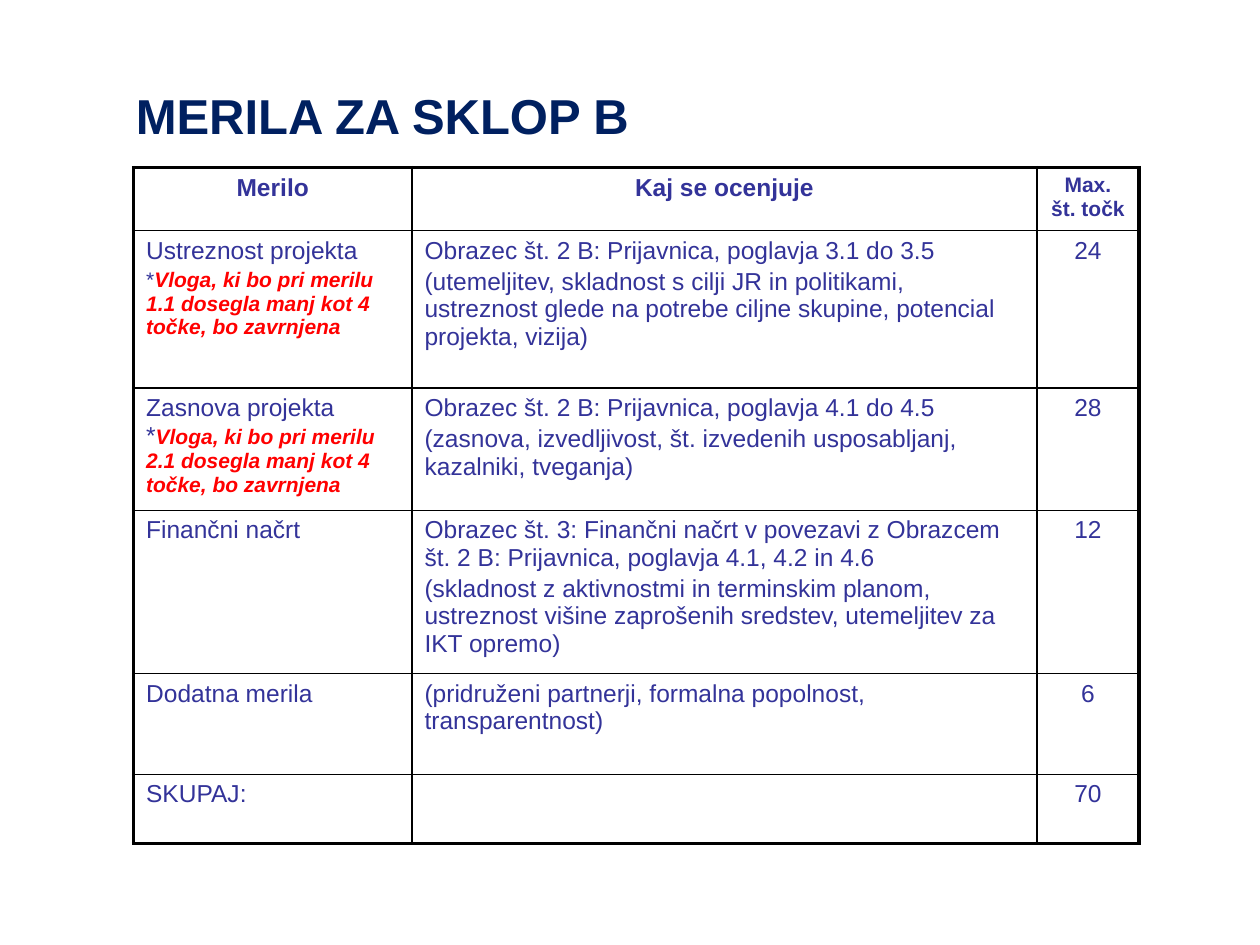
from lxml import etree
from pptx import Presentation
from pptx.dml.color import RGBColor
from pptx.enum.text import MSO_ANCHOR, PP_ALIGN
from pptx.oxml.ns import qn
from pptx.util import Inches, Pt

COLORS = {"title": "002060", "text": "333399", "warning": "FF0000",
          "border": "000000", "background": "FFFFFF"}


def add_span(para, text, size=14, color="text", bold=False, italic=False):
    span = para.add_run()
    span.text = text
    font = span.font
    font.name = "Arial"
    font.size = Pt(size)
    font.bold = bold
    font.italic = italic
    font.color.rgb = RGBColor.from_string(COLORS[color])


def set_border(cell, side, width):
    """Draw one side (L, R, T or B) of a cell; call before setting its fill."""
    line = etree.SubElement(cell._tc.get_or_add_tcPr(), qn(f"a:ln{side}"),
                            w=str(Pt(width)))
    fill = etree.SubElement(line, qn("a:solidFill"))
    etree.SubElement(fill, qn("a:srgbClr"), val=COLORS["border"])


deck = Presentation()
deck.slide_width = Inches(10)
deck.slide_height = Inches(7.5)
page = deck.slides.add_slide(deck.slide_layouts[6])

title = page.shapes.add_textbox(Inches(0.98), Inches(0.44), Inches(7.95), Inches(0.94))
title.text_frame.word_wrap = True
title.text_frame.vertical_anchor = MSO_ANCHOR.MIDDLE
add_span(title.text_frame.paragraphs[0], "MERILA ZA SKLOP B",
         size=28, color="title", bold=True)

# Each row: criterion, (asterisk size, warning) or None, description paragraphs, points
criteria = [
    ("Ustreznost projekta",
     (12, "Vloga, ki bo pri merilu 1.1 dosegla manj kot 4 točke, bo zavrnjena"),
     ["Obrazec št. 2 B: Prijavnica, poglavja 3.1 do 3.5",
      "(utemeljitev, skladnost s cilji JR in politikami, ustreznost glede na "
      "potrebe ciljne skupine, potencial projekta, vizija)"], "24"),
    ("Zasnova projekta",
     (14, "Vloga, ki bo pri merilu 2.1 dosegla manj kot 4 točke, bo zavrnjena"),
     ["Obrazec št. 2 B: Prijavnica, poglavja 4.1 do 4.5",
      "(zasnova, izvedljivost, št. izvedenih usposabljanj, kazalniki, tveganja)"], "28"),
    ("Finančni načrt", None,
     ["Obrazec št. 3: Finančni načrt v povezavi z Obrazcem št. 2 B: Prijavnica, "
      "poglavja 4.1, 4.2 in 4.6",
      "(skladnost z aktivnostmi in terminskim planom, ustreznost višine "
      "zaprošenih sredstev, utemeljitev za IKT opremo)"], "12"),
    ("Dodatna merila", None,
     ["(pridruženi partnerji, formalna popolnost, transparentnost)"], "6"),
    ("SKUPAJ:", None, [], "70"),
]
column_widths = [2.21, 4.96, 0.81]
row_heights = [0.5, 1.25, 0.97, 1.29, 0.8, 0.55]
last_row, last_column = len(row_heights) - 1, len(column_widths) - 1

table = page.shapes.add_table(
    len(row_heights), len(column_widths), Inches(1.06), Inches(1.33),
    Inches(sum(column_widths)), Inches(sum(row_heights))).table
table.first_row = False
table.horz_banding = False
for column, width in zip(table.columns, column_widths):
    column.width = Inches(width)
for row, height in zip(table.rows, row_heights):
    row.height = Inches(height)

for row in range(last_row + 1):
    for column in range(last_column + 1):
        cell = table.cell(row, column)
        outer_sides = {"L": column == 0, "R": column == last_column,
                       "T": row == 0, "B": row == last_row}
        for side, is_outer in outer_sides.items():
            set_border(cell, side, 2.25 if is_outer else 1)
        cell.fill.solid()
        cell.fill.fore_color.rgb = RGBColor.from_string(COLORS["background"])

for column, (heading, size) in enumerate(
        [("Merilo", 14), ("Kaj se ocenjuje", 14), ("Max. št. točk", 12)]):
    para = table.cell(0, column).text_frame.paragraphs[0]
    para.alignment = PP_ALIGN.CENTER
    add_span(para, heading, size=size, bold=True)

for row, (name, warning, descriptions, points) in enumerate(criteria, start=1):
    frame = table.cell(row, 0).text_frame
    add_span(frame.paragraphs[0], name)
    if warning:
        star_size, warning_text = warning
        para = frame.add_paragraph()
        para.space_before = Pt(2.4 if star_size == 12 else 0)
        add_span(para, "*", size=star_size)
        add_span(para, warning_text, size=12, color="warning", bold=True, italic=True)

    frame = table.cell(row, 1).text_frame
    for index, description in enumerate(descriptions):
        para = frame.add_paragraph() if index else frame.paragraphs[0]
        para.space_before = Pt(2)
        add_span(para, description)

    para = table.cell(row, last_column).text_frame.paragraphs[0]
    para.alignment = PP_ALIGN.CENTER
    add_span(para, points)

deck.save("out.pptx")
